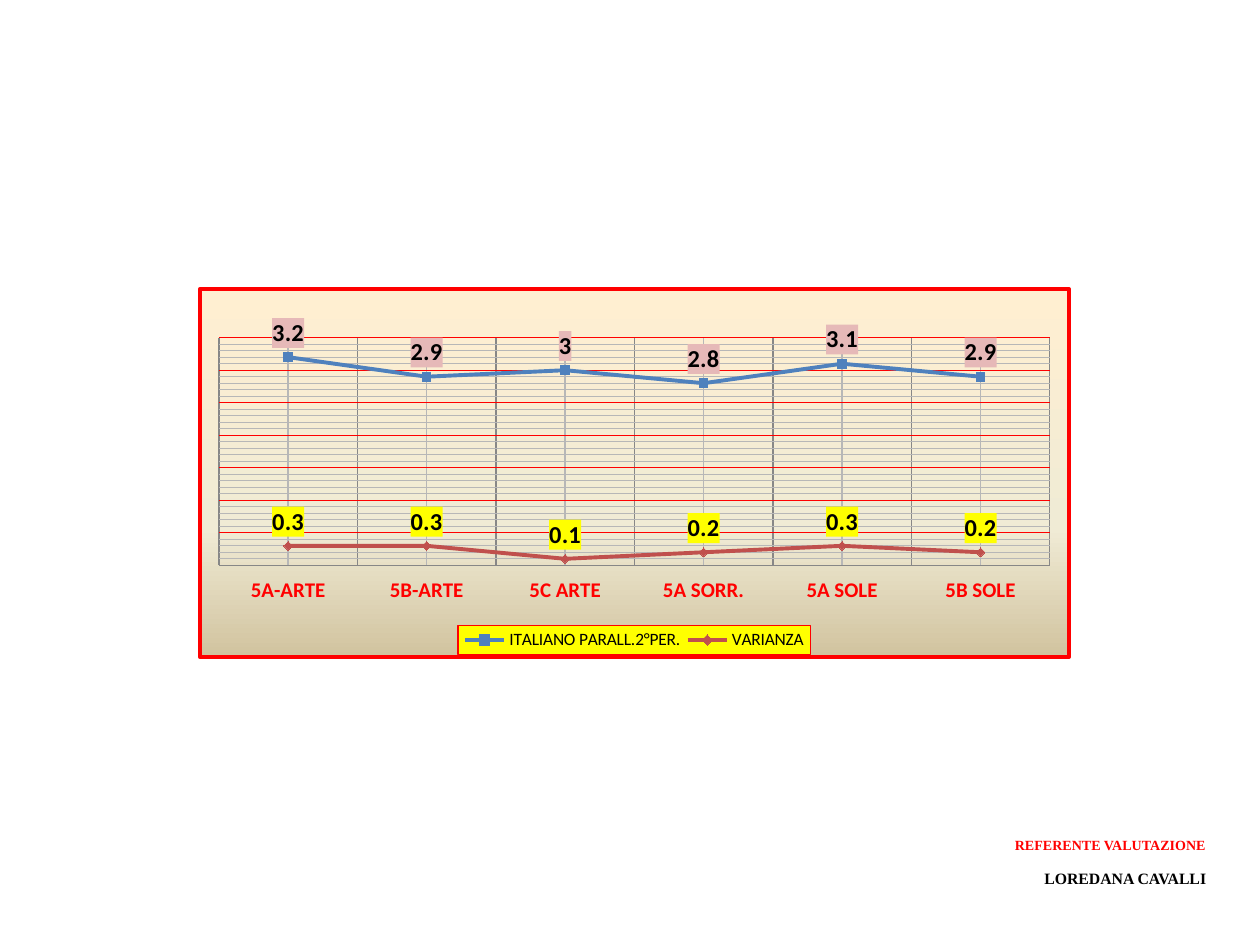
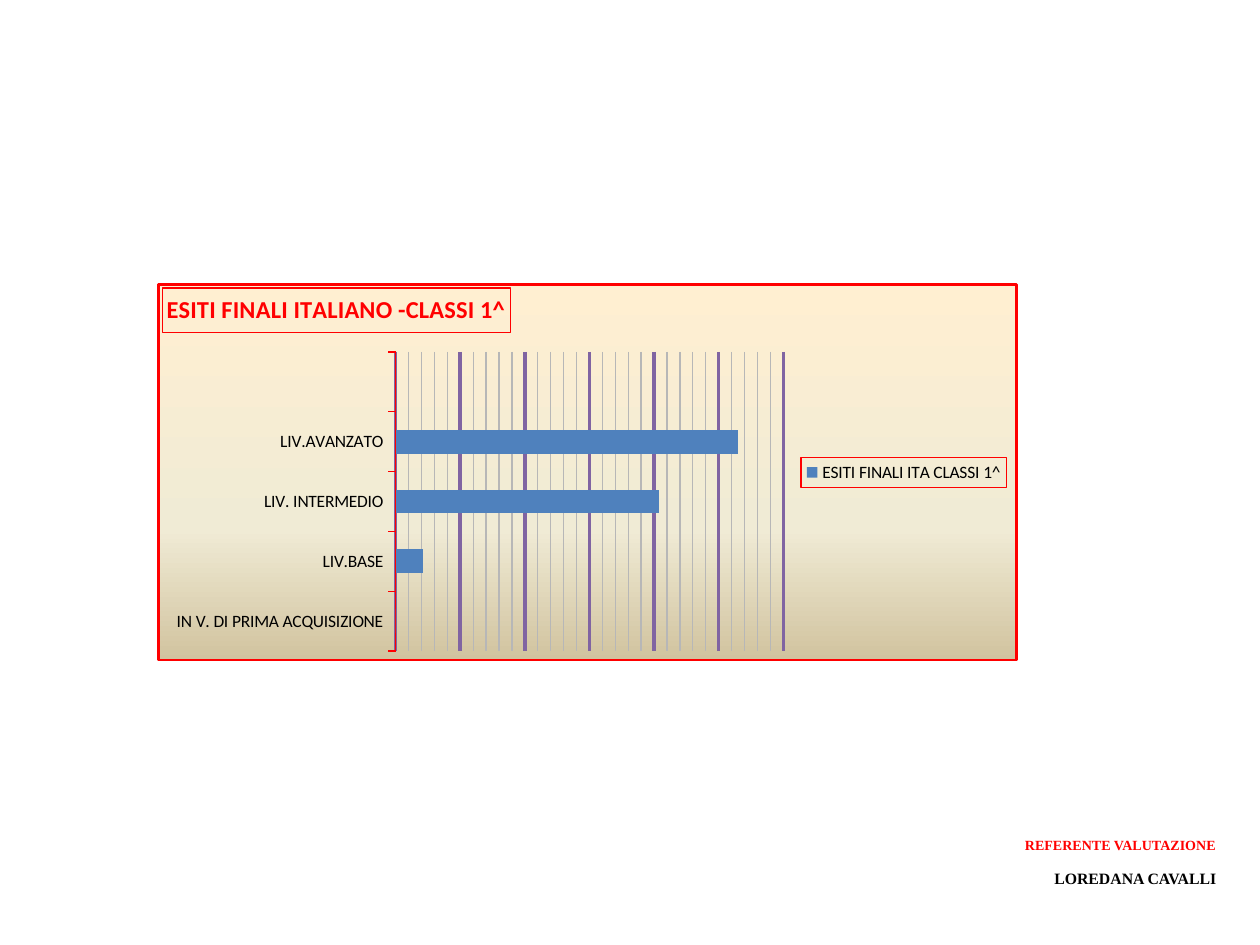
from pptx import Presentation
from pptx.chart.data import CategoryChartData
from pptx.dml.color import RGBColor
from pptx.enum.chart import XL_CHART_TYPE as ChartType
from pptx.enum.chart import XL_LABEL_POSITION as LabelPosition
from pptx.enum.chart import XL_LEGEND_POSITION as LegendPosition
from pptx.enum.chart import XL_MARKER_STYLE as Marker
from pptx.enum.chart import XL_TICK_LABEL_POSITION as TickLabels
from pptx.enum.chart import XL_TICK_MARK as TickMark
from pptx.enum.text import PP_ALIGN as Align
from pptx.oxml import parse_xml
from pptx.oxml.ns import nsdecls, qn
from pptx.util import Inches, Pt

RED = RGBColor(0xFF, 0x00, 0x00)
BLACK = RGBColor(0x00, 0x00, 0x00)
BLUE = RGBColor(0x4F, 0x81, 0xBD)
BRICK = RGBColor(0xC0, 0x50, 0x4D)
PURPLE = RGBColor(0x80, 0x64, 0xA2)
YELLOW = RGBColor(0xFF, 0xFF, 0x00)
PINK = RGBColor(0xE6, 0xB9, 0xB8)
SAND_GRADIENT = [
    (0, RGBColor(0xFF, 0xEF, 0xD1)),
    (65, RGBColor(0xF0, 0xEB, 0xD5)),
    (100, RGBColor(0xD1, 0xC3, 0x9F)),
]

FOOTER = [("REFERENTE VALUTAZIONE", 8, RED), ("LOREDANA CAVALLI", 9, BLACK)]
FOOTER_FONT = "Times New Roman"
CHART_FONT = "Calibri"

PARALLEL_TESTS = {
    "type": ChartType.LINE_MARKERS,
    "box": (1.57, 2.28, 6.93, 2.95),
    "categories": ["5A-ARTE", "5B-ARTE", "5C ARTE", "5A SORR.", "5A SOLE", "5B SOLE"],
    "series": [
        ("ITALIANO PARALL.2°PER.", [3.2, 2.9, 3, 2.8, 3.1, 2.9]),
        ("VARIANZA", [0.3, 0.3, 0.1, 0.2, 0.3, 0.2]),
    ],
    "border": 2.25,
    "plot": (0.022, 0.132, 0.956, 0.619),
    "legend": LegendPosition.BOTTOM,
    "step": 0.5,
    "steps": 7,
    "grid": (RED, 0.75),
}
LINE_STYLES = [(BLUE, Marker.SQUARE, PINK), (BRICK, Marker.DIAMOND, YELLOW)]

FINAL_RESULTS = {
    "type": ChartType.BAR_CLUSTERED,
    "box": (1.25, 2.25, 6.83, 3),
    "categories": ["IN V. DI PRIMA ACQUISIZIONE", "LIV.BASE", "LIV. INTERMEDIO", "LIV.AVANZATO", ""],
    "series": [("ESITI FINALI ITA CLASSI 1^", [0, 8, 77, 100, None])],
    "border": 1.5,
    "plot": (0.276, 0.179, 0.452, 0.797),
    "legend": LegendPosition.RIGHT,
    "step": 18.86,
    "steps": 6,
    "grid": (PURPLE, 2),
}
RESULTS_TITLE = "ESITI FINALI ITALIANO -CLASSI 1^"


def solid(color):
    return f'<a:solidFill><a:srgbClr val="{color}"/></a:solidFill>'


def gradient(stops):
    marks = "".join(
        f'<a:gs pos="{share * 1000}"><a:srgbClr val="{color}"/></a:gs>' for share, color in stops
    )
    return f'<a:gradFill><a:gsLst>{marks}</a:gsLst><a:lin ang="5400000" scaled="0"/></a:gradFill>'


def box_style(fill="<a:noFill/>", border=None):
    line = f'<a:ln w="{Pt(border)}">{solid(RED)}</a:ln>' if border else ""
    return parse_xml(f'<c:spPr {nsdecls("c", "a")}>{fill}{line}</c:spPr>')


def place(part, index, left, top, width=None, height=None, inner=False):
    for layout in part.findall(qn("c:layout")):
        part.remove(layout)
    target = '<c:layoutTarget val="inner"/>' if inner else ""
    sizes = [(name, value) for name, value in zip("xywh", (left, top, width, height)) if value is not None]
    modes = '<c:xMode val="edge"/><c:yMode val="edge"/>'
    values = "".join(f'<c:{name} val="{value}"/>' for name, value in sizes)
    part.insert(index, parse_xml(
        f'<c:layout {nsdecls("c")}><c:manualLayout>{target}{modes}{values}</c:manualLayout></c:layout>'
    ))


def find_part(chart, name):
    return chart.element.find(f'.//{qn("c:" + name)}')


def frame_part(part, fill="<a:noFill/>"):
    part.find(qn("c:overlay")).addnext(box_style(fill, 0.75))


def add_framed_chart(slide, content):
    data = CategoryChartData()
    data.categories = content["categories"]
    for name, values in content["series"]:
        data.add_series(name, values)
    box = [Inches(length) for length in content["box"]]
    chart = slide.shapes.add_chart(content["type"], *box, data).chart
    chart.has_title = False
    chart.font.name = CHART_FONT
    chart.font.size = Pt(10)
    chart.font.color.rgb = BLACK
    chart.plots[0].vary_by_categories = False
    find_part(chart, "chart").addnext(box_style(gradient(SAND_GRADIENT), content["border"]))
    place(find_part(chart, "plotArea"), 0, *content["plot"], inner=True)

    chart.has_legend = True
    chart.legend.position = content["legend"]
    chart.legend.include_in_layout = False

    axis = chart.value_axis
    axis.minimum_scale = 0
    axis.maximum_scale = content["step"] * content["steps"]
    axis.major_unit = content["step"]
    axis.minor_unit = content["step"] / 5
    axis.has_major_gridlines = True
    axis.has_minor_gridlines = True
    color, width = content["grid"]
    axis.major_gridlines.format.line.color.rgb = color
    axis.major_gridlines.format.line.width = Pt(width)
    axis.visible = False
    chart.category_axis.tick_label_position = TickLabels.LOW
    return chart


def add_footer(slide, left):
    box = slide.shapes.add_textbox(Inches(left), Inches(6.58), Inches(5), Inches(0.52))
    frame = box.text_frame
    frame.word_wrap = True
    for index, (text, size, color) in enumerate(FOOTER):
        paragraph = frame.paragraphs[0] if index == 0 else frame.add_paragraph()
        paragraph.alignment = Align.RIGHT
        paragraph.line_spacing = 1.07
        paragraph.space_after = Pt(8)
        run = paragraph.add_run()
        run.text = text
        run.font.name = FOOTER_FONT
        run.font.size = Pt(size)
        run.font.bold = True
        run.font.color.rgb = color


def build_parallel_tests(slide):
    chart = add_framed_chart(slide, PARALLEL_TESTS)
    legend = find_part(chart, "legend")
    place(legend, 1, 0.297, 0.914, 0.406, 0.08)
    frame_part(legend, solid(YELLOW))

    axis = chart.category_axis
    axis.has_major_gridlines = True
    axis.has_minor_gridlines = True
    axis.major_tick_mark = TickMark.NONE
    axis.tick_labels.font.size = Pt(12)
    axis.tick_labels.font.bold = True
    axis.tick_labels.font.color.rgb = RED

    for series, (color, marker, label_fill) in zip(chart.plots[0].series, LINE_STYLES):
        series.smooth = False
        series.format.line.color.rgb = color
        series.format.line.width = Pt(2.25)
        series.marker.style = marker
        series.marker.size = 5
        series.marker.format.fill.solid()
        series.marker.format.fill.fore_color.rgb = color
        series.marker.format.line.color.rgb = color
        labels = series.data_labels
        labels.show_value = True
        labels.position = LabelPosition.ABOVE
        labels.font.size = Pt(14)
        labels.font.bold = True
        labels.font.color.rgb = BLACK
    text_styles = chart.element.findall(f'.//{qn("c:dLbls")}/{qn("c:txPr")}')
    for text_style, (_, _, label_fill) in zip(text_styles, LINE_STYLES):
        text_style.addprevious(box_style(solid(label_fill)))
    add_footer(slide, 4.67)


def build_final_results(slide):
    chart = add_framed_chart(slide, FINAL_RESULTS)
    run = chart.chart_title.text_frame.paragraphs[0].add_run()
    run.text = RESULTS_TITLE
    run.font.size = Pt(14)
    run.font.bold = True
    run.font.color.rgb = RED
    chart.chart_title.include_in_layout = False
    title = find_part(chart, "title")
    place(title, 1, 0.004, 0.008)
    frame_part(title)
    frame_part(find_part(chart, "legend"))

    axis = chart.category_axis
    axis.major_tick_mark = TickMark.OUTSIDE
    axis.format.line.color.rgb = RED
    axis.format.line.width = Pt(0.75)
    plot = chart.plots[0]
    plot.gap_width = 150
    bars = plot.series[0]
    bars.format.fill.solid()
    bars.format.fill.fore_color.rgb = BLUE
    add_footer(slide, 4.75)


def main():
    presentation = Presentation()
    presentation.slide_width = Inches(10)
    presentation.slide_height = Inches(7.5)
    for build in (build_parallel_tests, build_final_results):
        build(presentation.slides.add_slide(presentation.slide_layouts[6]))
    presentation.save("out.pptx")


if __name__ == "__main__":
    main()
